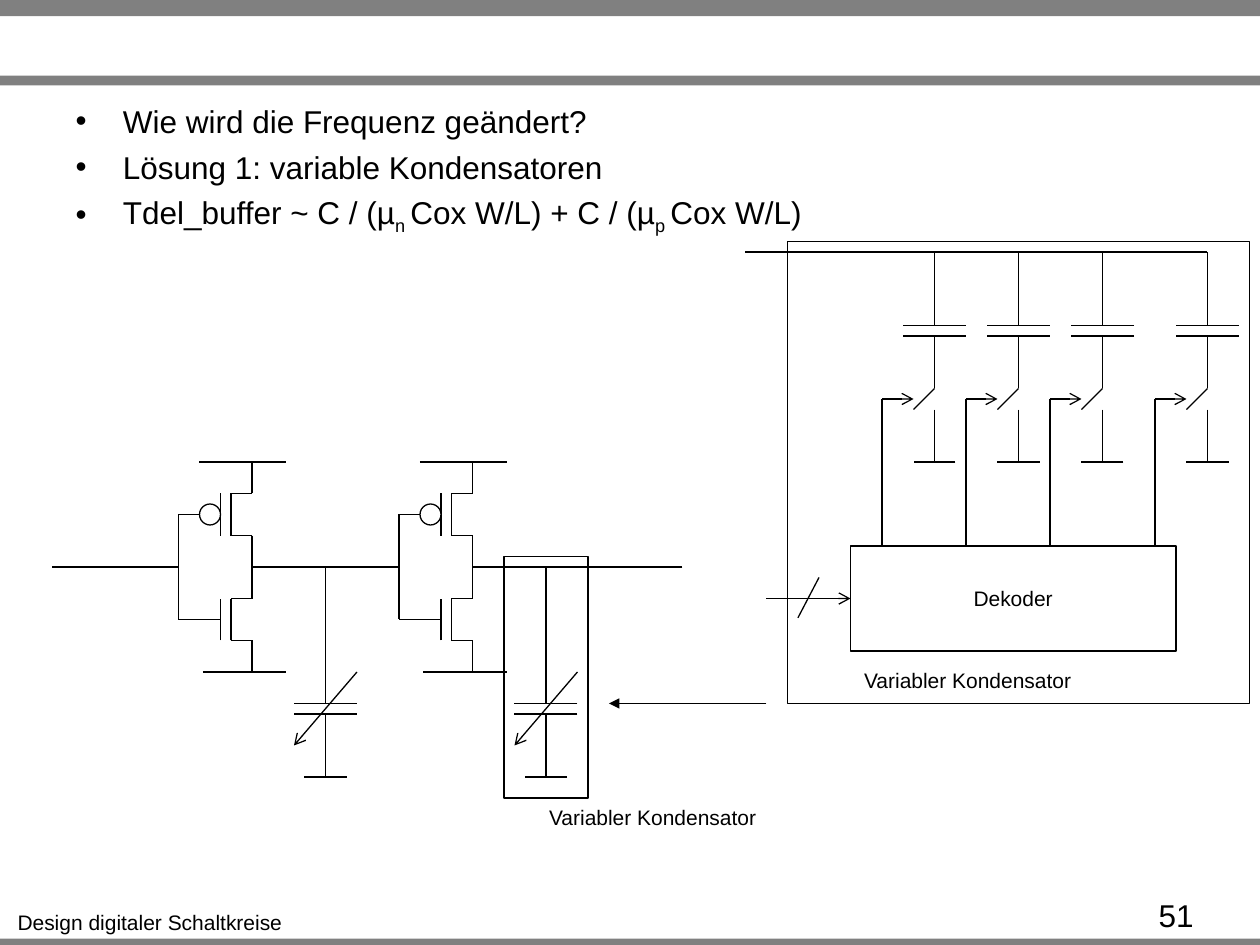
"""Build the slide on changing an oscillator's frequency with variable capacitors."""
from pptx import Presentation
from pptx.dml.color import RGBColor
from pptx.enum.shapes import MSO_CONNECTOR, MSO_SHAPE
from pptx.enum.text import MSO_ANCHOR, MSO_AUTO_SIZE, PP_ALIGN
from pptx.oxml.ns import qn
from pptx.util import Pt
from lxml.etree import SubElement

BLACK = RGBColor(0, 0, 0)
WHITE = RGBColor(255, 255, 255)
GRAY = RGBColor(128, 128, 128)
FONT = "Arial"

prs = Presentation()
prs.slide_width, prs.slide_height = Pt(720), Pt(540)
slide = prs.slides.add_slide(prs.slide_layouts[1])
title = slide.shapes.title
title.element.getparent().remove(title.element)


def wire(x1, y1, x2, y2, head=None):
    line = slide.shapes.add_connector(
        MSO_CONNECTOR.STRAIGHT, Pt(x1), Pt(y1), Pt(x2), Pt(y2))
    line.line.color.rgb = BLACK
    line.line.width = Pt(0.75)
    if head:
        SubElement(line.line._get_or_add_ln(), qn("a:tailEnd"), type=head)
    SubElement(line._element.spPr, qn("a:effectLst"))
    return line


def outline(kind, left, top, width, height, fill=None):
    shape = slide.shapes.add_shape(kind, Pt(left), Pt(top), Pt(width), Pt(height))
    shape.shadow.inherit = False
    if fill is None:
        shape.fill.background()
    else:
        shape.fill.solid()
        shape.fill.fore_color.rgb = fill
    shape.line.color.rgb = BLACK
    shape.line.width = Pt(0.75)
    return shape


for top, height in [(536.4, 3.6), (0, 9.2), (43.2, 5.6)]:
    bar = outline(MSO_SHAPE.RECTANGLE, 0, top, 720, height, GRAY)
    bar.line.fill.background()

body = slide.placeholders[1]
body.left, body.top, body.width, body.height = Pt(36), Pt(54.7), Pt(648), Pt(71.3)
body.text_frame.auto_size = MSO_AUTO_SIZE.NONE
bullets = [
    [("Wie wird die Frequenz geändert?", False)],
    [("Lösung 1: variable Kondensatoren", False)],
    [("Tdel_buffer ~ C / (µ", False), ("n ", True), ("Cox W/L) + C / (µ", False),
     ("p ", True), ("Cox W/L)", False)],
]
for number, pieces in enumerate(bullets):
    item = body.text_frame.paragraphs[0] if number == 0 else body.text_frame.add_paragraph()
    item_format = item._p.get_or_add_pPr()
    item_format.set("marL", str(Pt(27)))
    item_format.set("indent", str(-Pt(27)))
    SubElement(item_format, qn("a:buFont"), typeface=FONT)
    SubElement(item_format, qn("a:buChar"), char="•")
    item.space_before = Pt(4.4 if number else 0)
    for words, subscript in pieces:
        run = item.add_run()
        run.text = words
        run.font.name, run.font.size = FONT, Pt(18)
        run.font.color.rgb = BLACK
        if subscript:
            run._r.get_or_add_rPr().set("baseline", "-25000")

for gate_x in (102, 228):
    plate_x, channel_x, drain_x = gate_x + 24, gate_x + 30, gate_x + 42
    wire(gate_x + 12, 264, gate_x + 61.5, 264)
    wire(gate_x + 14, 384, gate_x + 61.5, 384)
    for rail, outer, gate, inner in [(264, 282, 294, 306), (384, 366, 354, 342)]:
        wire(drain_x, rail, drain_x, outer)
        wire(drain_x, outer, channel_x, outer)
        wire(channel_x, outer, channel_x, inner)
        wire(drain_x, inner, channel_x, inner)
        wire(drain_x, inner, drain_x, 324)
        wire(plate_x, outer, plate_x, inner)
        wire(gate_x + 12, gate, plate_x, gate)
        wire(gate_x + 12, gate, gate_x, gate)
    outline(MSO_SHAPE.OVAL, gate_x + 12, 288, 12, 12, WHITE)
    wire(gate_x, 294, gate_x, 354)

    load_x = gate_x + 84
    wire(load_x, 324, drain_x, 324)
    wire(load_x, 324, load_x, 402)
    for plate_y in (402, 408):
        wire(load_x + 18, plate_y, load_x - 18, plate_y)
    wire(load_x, 408, load_x, 444)
    wire(load_x + 12, 444, load_x - 12, 444)
    wire(load_x + 18, 384, load_x - 18, 426, "arrow")

for start, end in [(102, 30), (228, 186), (390, 312)]:
    wire(start, 324, end, 324)

wire(426, 144, 690, 144)
for branch_x in (534, 582, 630, 690):
    control_x = branch_x - 30
    wire(branch_x, 144, branch_x, 186)
    for plate_y in (186, 192):
        wire(branch_x + 18, plate_y, branch_x - 18, plate_y)
    wire(branch_x, 192, branch_x, 222)
    wire(branch_x, 222, branch_x - 12, 234)
    wire(branch_x, 234, branch_x, 264)
    wire(branch_x + 12, 264, branch_x - 12, 264)
    wire(control_x, 228, branch_x - 12, 228, "arrow")
    wire(control_x, 228, control_x, 312)

decoder = outline(MSO_SHAPE.RECTANGLE, 486, 312, 186, 60)
decoder.text_frame.vertical_anchor = MSO_ANCHOR.MIDDLE
decoder_label = decoder.text_frame.paragraphs[0]
decoder_label.alignment = PP_ALIGN.CENTER
decoder_run = decoder_label.add_run()
decoder_run.text = "Dekoder"
decoder_run.font.name, decoder_run.font.size = FONT, Pt(12)
decoder_run.font.color.rgb = BLACK

control_bus = wire(438, 342, 486, 342, "arrow")
control_bus.end_connect(decoder, 1)
wire(468, 330, 456, 353)

labels = [
    ("Design digitaler Schaltkreise", 2.2, 516.2, 167, 21.6, 12, PP_ALIGN.CENTER),
    ("Variabler Kondensator", 306, 456, 134, 21.6, 12, PP_ALIGN.CENTER),
    ("Variabler Kondensator", 486, 378, 134, 21.6, 12, PP_ALIGN.CENTER),
    ("51", 655, 508.3, 62.6, 17.3, 18, PP_ALIGN.LEFT),
]
for words, left, top, width, height, size, alignment in labels:
    label = slide.shapes.add_textbox(Pt(left), Pt(top), Pt(width), Pt(height))
    label.text_frame.word_wrap = False
    paragraph = label.text_frame.paragraphs[0]
    paragraph.alignment = alignment
    run = paragraph.add_run()
    run.text = words
    run.font.name, run.font.size = FONT, Pt(size)
    run.font.color.rgb = BLACK

outline(MSO_SHAPE.RECTANGLE, 450, 138, 264, 264)
outline(MSO_SHAPE.RECTANGLE, 288, 318, 48, 138)
wire(438, 402, 348, 402, "triangle")

prs.save("out.pptx")
